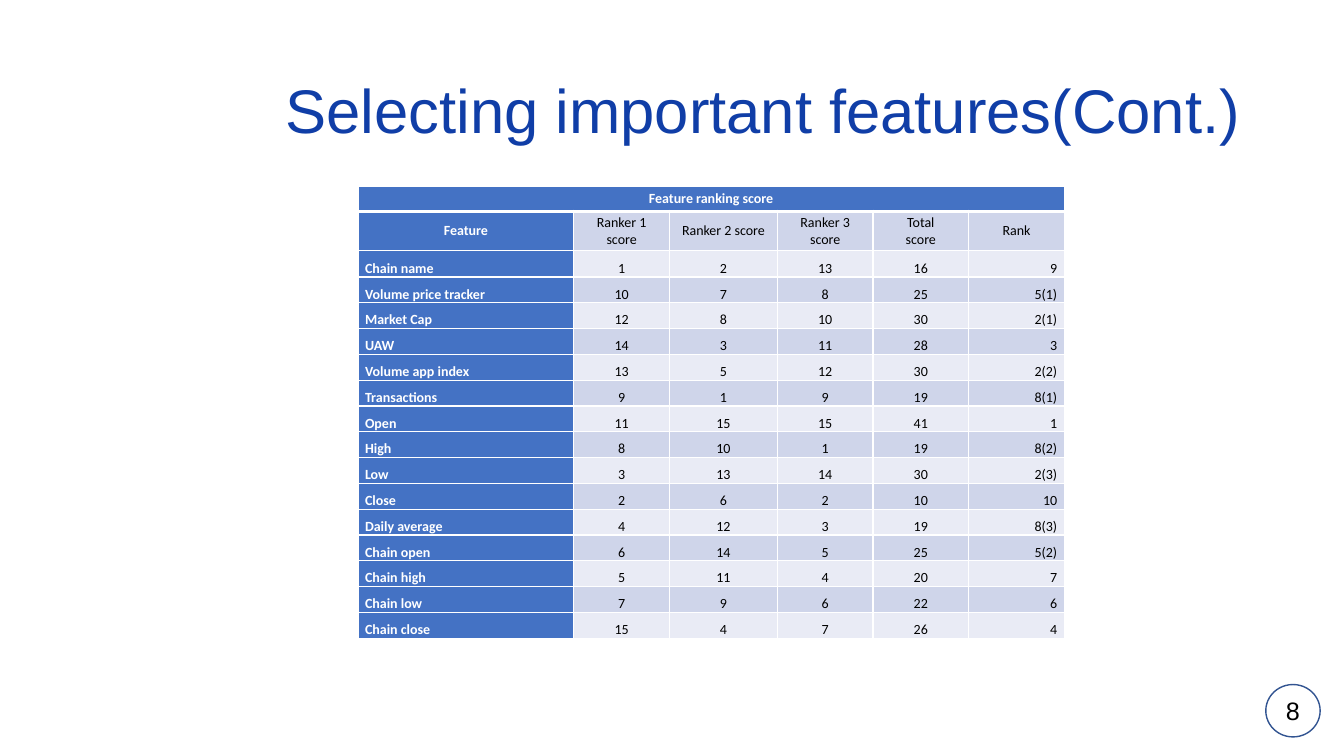
from lxml import etree
from pptx import Presentation
from pptx import util as u
from pptx.dml.color import RGBColor
from pptx.enum import shapes, text
from pptx.oxml import ns

NAVY = RGBColor(0x10, 0x3E, 0xA7)
BLUE = RGBColor(0x44, 0x72, 0xC4)
RING = RGBColor(0x32, 0x54, 0x91)
DARK = RGBColor(0xCF, 0xD5, 0xEA)
PALE = RGBColor(0xE9, 0xEB, 0xF5)
WHITE = RGBColor(0xFF, 0xFF, 0xFF)
BLACK = RGBColor(0, 0, 0)
ALIGN = text.PP_ALIGN
ANCHOR = text.MSO_ANCHOR

HEAD = ["Feature", "Ranker 1 score", "Ranker 2 score", "Ranker 3 score", "Total\nscore", "Rank"]
DATA = [
    ["Chain name", 1, 2, 13, 16, "9"],
    ["Volume price tracker", 10, 7, 8, 25, "5(1)"],
    ["Market Cap", 12, 8, 10, 30, "2(1)"],
    ["UAW", 14, 3, 11, 28, "3"],
    ["Volume app index", 13, 5, 12, 30, "2(2)"],
    ["Transactions", 9, 1, 9, 19, "8(1)"],
    ["Open", 11, 15, 15, 41, "1"],
    ["High", 8, 10, 1, 19, "8(2)"],
    ["Low", 3, 13, 14, 30, "2(3)"],
    ["Close", 2, 6, 2, 10, "10"],
    ["Daily average", 4, 12, 3, 19, "8(3)"],
    ["Chain open", 6, 14, 5, 25, "5(2)"],
    ["Chain high", 5, 11, 4, 20, "7"],
    ["Chain low", 7, 9, 6, 22, "6"],
    ["Chain close", 15, 4, 7, 26, "4"],
]
WIDTHS = [5.44, 2.41, 2.72, 2.41, 2.41, 2.41]
HEIGHTS = [0.63, 0.99, 0.66] + [0.65] * 13 + [0.66]


def write(para, words, font, size, color, bold=False):
    """Add the words as runs, with a line break at each newline."""
    for i, part in enumerate(words.split("\n")):
        if i:
            para.add_line_break()
        run = para.add_run()
        run.text = part
        run.font.name = font
        run.font.size = u.Pt(size)
        run.font.bold = bold
        run.font.color.rgb = color


def edge(cell, side, width):
    """Give one side of a cell a white border."""
    line = etree.SubElement(cell._tc.get_or_add_tcPr(), ns.qn("a:ln" + side), w=str(u.Pt(width)))
    fill = etree.SubElement(line, ns.qn("a:solidFill"))
    etree.SubElement(fill, ns.qn("a:srgbClr"), val=str(WHITE))


deck = Presentation()
deck.slide_width = u.Cm(33.87)
deck.slide_height = u.Cm(19.05)
slide = deck.slides.add_slide(deck.slide_layouts[5])

# Title
title = slide.shapes.title
title.left, title.top = u.Cm(2.33), u.Cm(1.01)
title.width, title.height = u.Cm(29.21), u.Cm(3.68)
title.text_frame.vertical_anchor = ANCHOR.MIDDLE
para = title.text_frame.paragraphs[0]
para.alignment = ALIGN.RIGHT
para.line_spacing = 0.9
write(para, "Selecting important features(Cont.)", "Arial", 44, NAVY)

# Ranking table
rows = [["Feature ranking score"] + [""] * 5, HEAD] + DATA
frame = slide.shapes.add_table(len(rows), len(HEAD), u.Cm(9.02), u.Cm(4.7),
                               u.Cm(sum(WIDTHS)), u.Cm(sum(HEIGHTS)))
table = frame.table
for col, width in zip(table.columns, WIDTHS):
    col.width = u.Cm(width)
for row, height in zip(table.rows, HEIGHTS):
    row.height = u.Cm(height)
table.cell(0, 0).merge(table.cell(0, 5))

for r, row in enumerate(rows):
    for c, value in enumerate(row):
        cell = table.cell(r, c)
        cell.margin_left = cell.margin_right = u.Cm(0.18)
        cell.margin_top = cell.margin_bottom = 0
        cell.vertical_anchor = ANCHOR.MIDDLE if r < 2 else ANCHOR.BOTTOM
        for side in "LRTB":
            thick = (r, side) in [(0, "B"), (1, "T")]
            edge(cell, side, 3 if thick else 1)
        label = r == 0 or c == 0
        cell.fill.solid()
        cell.fill.fore_color.rgb = BLUE if label else DARK if r % 2 else PALE
        if value == "":
            continue
        para = cell.text_frame.paragraphs[0]
        para.alignment = ALIGN.CENTER
        if r > 1 and c in (0, 5):
            para.alignment = ALIGN.LEFT if c == 0 else ALIGN.RIGHT
        write(para, str(value), "Calibri", 10, WHITE if label else BLACK, label)

# Page number
badge = slide.shapes.add_shape(shapes.MSO_SHAPE.OVAL, u.Cm(31.9), u.Cm(17.25), u.Cm(1.37), u.Cm(1.32))
badge.shadow.inherit = False
badge.fill.solid()
badge.fill.fore_color.rgb = WHITE
badge.line.color.rgb = RING
badge.line.width = u.Pt(1)
badge.text_frame.vertical_anchor = ANCHOR.MIDDLE
para = badge.text_frame.paragraphs[0]
para.alignment = ALIGN.CENTER
write(para, "8", "Arial", 18, BLACK)

deck.save("out.pptx")
